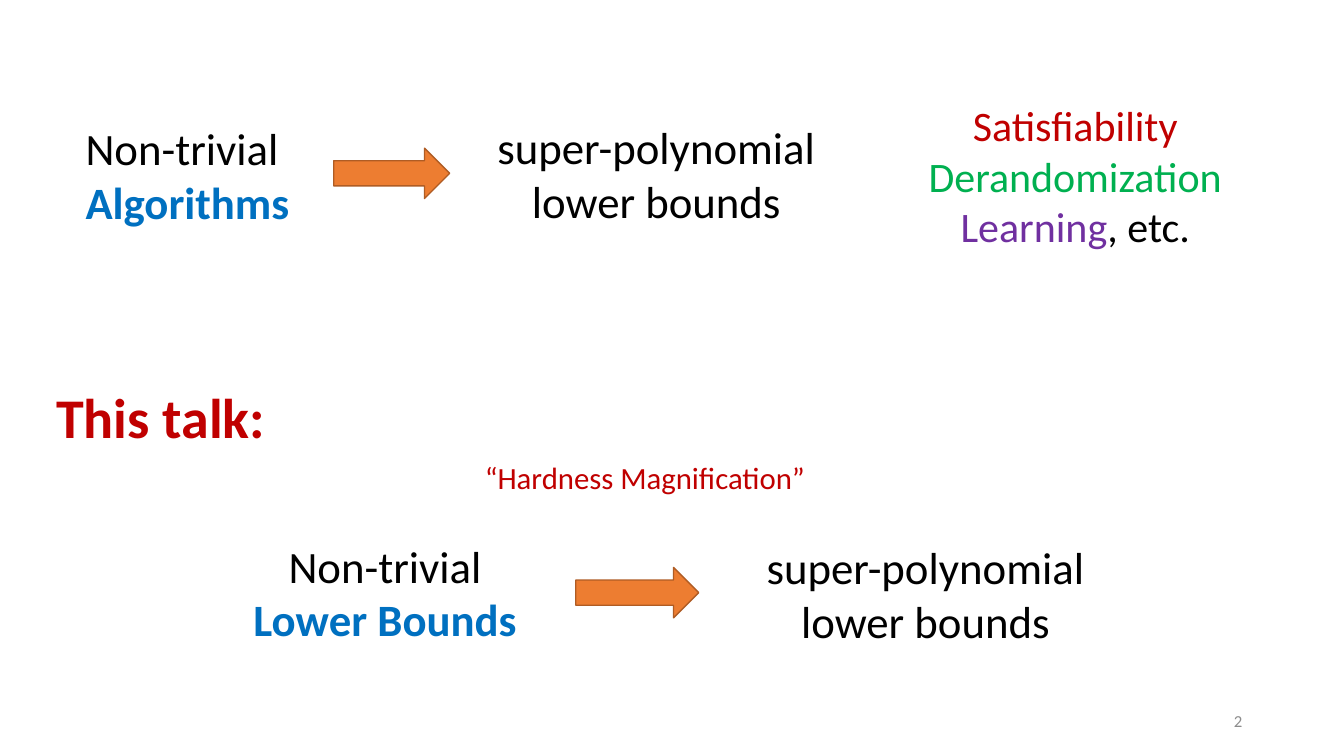
from pptx import Presentation
from pptx.dml.color import RGBColor
from pptx.enum.shapes import MSO_SHAPE
from pptx.enum.text import MSO_ANCHOR, MSO_AUTO_SIZE, PP_ALIGN
from pptx.util import Inches, Pt

FONT = "Calibri"
BLACK, BLUE, RED = "000000", "0070C0", "C00000"
GREEN, PURPLE, GREY = "00B050", "7030A0", "8C8C8C"
ORANGE, DARK_ORANGE = "ED7D31", "AF5C24"


def rgb(hex_string):
    return RGBColor.from_string(hex_string)


def add_text(slide, left, top, width, height, paragraphs, size,
             align=PP_ALIGN.CENTER):
    """Each paragraph is a list of (words, colour, bold) runs."""
    box = slide.shapes.add_textbox(
        Inches(left), Inches(top), Inches(width), Inches(height))
    frame = box.text_frame
    frame.word_wrap = True
    frame.auto_size = MSO_AUTO_SIZE.SHAPE_TO_FIT_TEXT
    for index, pieces in enumerate(paragraphs):
        paragraph = frame.add_paragraph() if index else frame.paragraphs[0]
        paragraph.alignment = align
        for words, colour, bold in pieces:
            run = paragraph.add_run()
            run.text = words
            run.font.name = FONT
            run.font.size = Pt(size)
            run.font.bold = bold
            run.font.color.rgb = rgb(colour)
    return frame


def add_premise(slide, left, top, width, subject, align):
    """The 'Non-trivial ...' side of an implication."""
    pieces = [("Non-trivial ", BLACK, False), (subject, BLUE, True)]
    add_text(slide, left, top, width, 1.18, [pieces], 32, align)


def add_conclusion(slide, left, top, width):
    """The lower-bound side of an implication."""
    lines = [[(words, BLACK, False)]
             for words in ("super-polynomial", "lower bounds")]
    add_text(slide, left, top, width, 1.18, lines, 32)


def add_implication_arrow(slide, left, top, width):
    arrow = slide.shapes.add_shape(
        MSO_SHAPE.RIGHT_ARROW,
        Inches(left), Inches(top), Inches(width), Inches(0.5))
    arrow.shadow.inherit = False
    arrow.fill.solid()
    arrow.fill.fore_color.rgb = rgb(ORANGE)
    arrow.line.color.rgb = rgb(DARK_ORANGE)
    arrow.line.width = Pt(1)


def add_slide_number(slide, number):
    frame = add_text(slide, 9.42, 6.95, 3, 0.4,
                     [[(number, GREY, False)]], 12, PP_ALIGN.RIGHT)
    frame.auto_size = MSO_AUTO_SIZE.NONE
    frame.vertical_anchor = MSO_ANCHOR.MIDDLE


def main():
    deck = Presentation()
    deck.slide_width, deck.slide_height = Inches(13.33), Inches(7.5)
    slide = deck.slides.add_slide(deck.slide_layouts[6])

    # Known connection: algorithms give lower bounds
    add_premise(slide, 0.75, 1.15, 2.77, "Algorithms", PP_ALIGN.LEFT)
    add_implication_arrow(slide, 3.31, 1.47, 1.15)
    add_conclusion(slide, 4.45, 1.14, 4.12)
    add_text(slide, 9.08, 0.94, 3.17, 1.62, [
        [("Satisfiability ", RED, False), ("Derandomization", GREEN, False)],
        [("Learning", PURPLE, False), (", etc.", BLACK, False)],
    ], 30)

    # This talk: weak lower bounds give strong ones
    add_text(slide, 0.21, 3.75, 2.77, 0.77, [[("This talk:", RED, True)]], 40)
    add_text(slide, 4.71, 4.5, 3.97, 0.47,
             [[("“Hardness Magnification”", RED, False)]], 22, PP_ALIGN.LEFT)
    add_premise(slide, 2.37, 5.29, 2.9, "Lower Bounds ", PP_ALIGN.CENTER)
    add_implication_arrow(slide, 5.71, 5.63, 1.22)
    add_conclusion(slide, 7.4, 5.31, 3.56)

    # Footer
    add_slide_number(slide, "2")

    deck.save("out.pptx")


if __name__ == "__main__":
    main()
